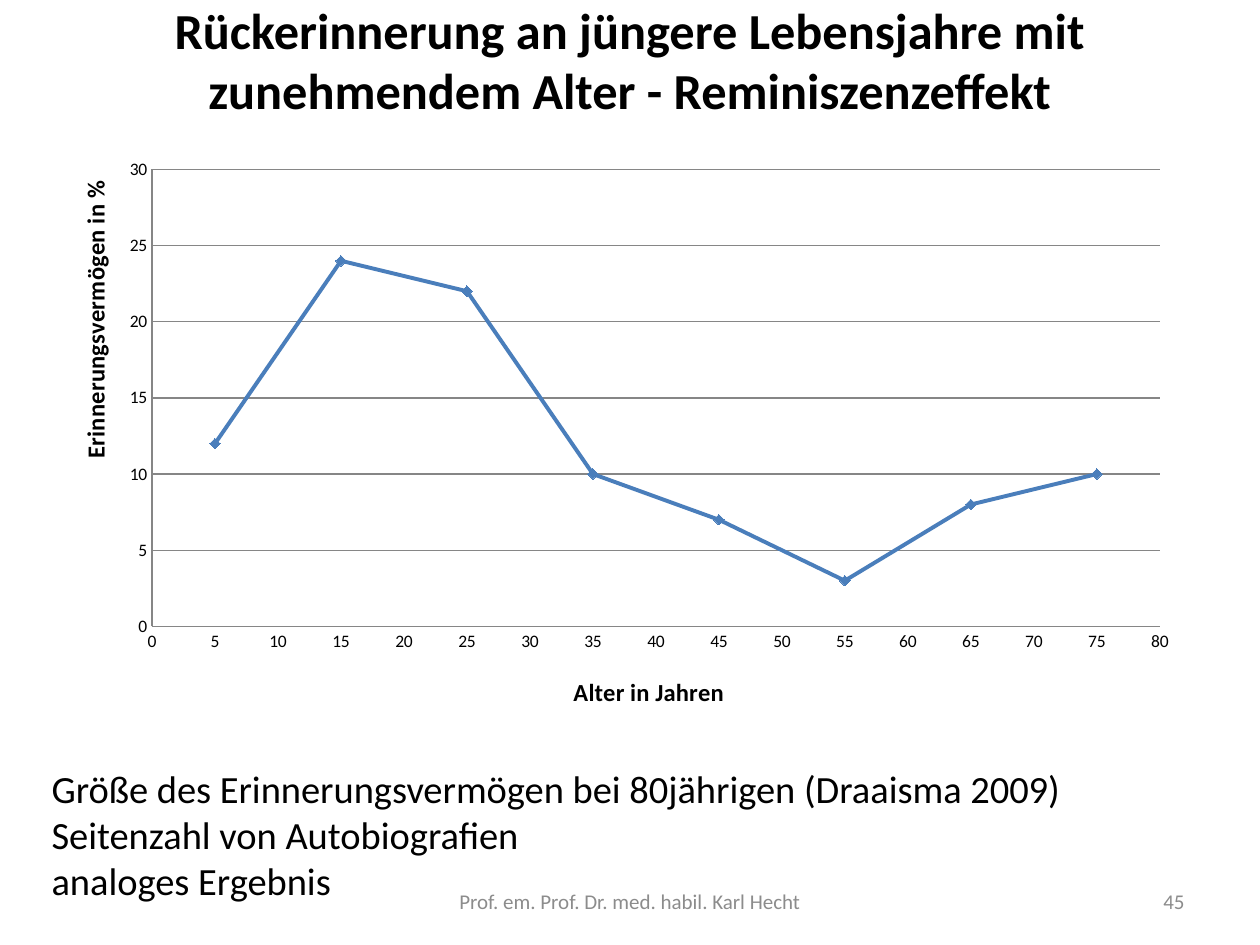
from lxml import etree
from pptx import Presentation
from pptx import util as u
from pptx.chart.data import XyChartData
from pptx.dml.color import RGBColor
from pptx.enum import chart as c
from pptx.enum import text as t
from pptx.oxml.ns import qn

BLACK = RGBColor(0x00, 0x00, 0x00)
GREY = RGBColor(0x8C, 0x8C, 0x8C)
AXIS_GREY = RGBColor(0x86, 0x86, 0x86)
BLUE = RGBColor(0x4F, 0x81, 0xBD)
CURVE_BLUE = RGBColor(0x4A, 0x7E, 0xBB)
FONT = "Calibri"

AGES = [5, 15, 25, 35, 45, 55, 65, 75]
RECALL = [12, 24, 22, 10, 7, 3, 8, 10]


def set_format(target, values):
    for name, value in values.items():
        setattr(target, name, value)


def set_font(font, size, color=BLACK, bold=False):
    set_format(font, {"name": FONT, "size": u.Pt(size), "bold": bold})
    font.color.rgb = color


def write_text(shape, lines, size, color=BLACK, bold=False,
               align=t.PP_ALIGN.LEFT, anchor=t.MSO_ANCHOR.TOP):
    frame = shape.text_frame
    set_format(frame, {"text": "\n".join(lines), "word_wrap": True,
                       "auto_size": t.MSO_AUTO_SIZE.NONE,
                       "vertical_anchor": anchor})
    for paragraph in frame.paragraphs:
        paragraph.alignment = align
        set_font(paragraph.font, size, color, bold)


def add_title(slide, title):
    shape = slide.shapes.title
    set_format(shape, {"left": u.Cm(0), "top": u.Cm(0),
                       "width": u.Cm(25.4), "height": u.Cm(2.39)})
    write_text(shape, [title], 28.8, bold=True, align=t.PP_ALIGN.CENTER,
               anchor=t.MSO_ANCHOR.MIDDLE)


def add_text(slide, box, lines, size, **style):
    shape = slide.shapes.add_textbox(*map(u.Cm, box))
    write_text(shape, lines, size, **style)


def set_layout(element, index, **fractions):
    """Place a chart part by fractions of the chart's width and height."""
    for old in element.findall(qn("c:layout")):
        element.remove(old)
    layout = etree.Element(qn("c:layout"))
    manual = etree.SubElement(layout, qn("c:manualLayout"))
    if "w" in fractions:
        etree.SubElement(manual, qn("c:layoutTarget"), val="inner")
    for name in ("xMode", "yMode"):
        etree.SubElement(manual, qn(f"c:{name}"), val="edge")
    for name, value in fractions.items():
        etree.SubElement(manual, qn(f"c:{name}"), val=str(value))
    element.insert(index, layout)


def format_axis(axis, title, maximum, rotation, x, y):
    set_format(axis, {"minimum_scale": 0, "maximum_scale": maximum,
                      "major_unit": 5,
                      "major_tick_mark": c.XL_TICK_MARK.NONE,
                      "minor_tick_mark": c.XL_TICK_MARK.NONE})
    set_font(axis.tick_labels.font, 10)
    axis.tick_labels.number_format = "General"
    axis.tick_labels.number_format_is_linked = False
    axis.format.line.color.rgb = AXIS_GREY
    axis.format.line.width = u.Pt(0.75)
    frame = axis.axis_title.text_frame
    frame.text = title
    set_font(frame.paragraphs[0].runs[0].font, 14, bold=True)
    element = axis.axis_title._element
    element.find(".//" + qn("a:bodyPr")).set("rot", str(rotation))
    set_layout(element, 1, x=x, y=y)


def format_series(series):
    series.smooth = True
    series.format.line.color.rgb = CURVE_BLUE
    series.format.line.width = u.Pt(2.25)
    marker = series.marker
    set_format(marker, {"style": c.XL_MARKER_STYLE.DIAMOND, "size": 6})
    marker.format.fill.solid()
    marker.format.fill.fore_color.rgb = BLUE
    marker.format.line.color.rgb = CURVE_BLUE


def add_recall_chart(slide):
    data = XyChartData()
    points = data.add_series("Series 1")
    for age, recall in zip(AGES, RECALL):
        points.add_data_point(age, recall)
    box = map(u.Cm, (0.79, 2.97, 23.22, 11.71))
    chart = slide.shapes.add_chart(
        c.XL_CHART_TYPE.XY_SCATTER_SMOOTH, *box, data).chart
    set_format(chart, {"has_title": False, "has_legend": False})
    set_font(chart.font, 10)
    chart.plots[0].vary_by_categories = False
    format_axis(chart.category_axis, "Alter in Jahren", 80, 0, 0.46, 0.9)
    format_axis(chart.value_axis, "Erinnerungsvermögen in %", 30, -5400000,
                0.03, 0.05)
    chart.category_axis.has_major_gridlines = False
    chart.value_axis.has_major_gridlines = True
    grid = chart.value_axis.major_gridlines.format.line
    grid.color.rgb = AXIS_GREY
    grid.width = u.Pt(0.75)
    format_series(chart.plots[0].series[0])
    plot_area = chart._chartSpace.find(".//" + qn("c:plotArea"))
    set_layout(plot_area, 0, x=0.098, y=0.038, w=0.875, h=0.787)


def main():
    presentation = Presentation()
    presentation.slide_width = u.Cm(25.4)
    presentation.slide_height = u.Cm(19.05)
    slide = presentation.slides.add_slide(presentation.slide_layouts[5])

    add_title(slide, "Rückerinnerung an jüngere Lebensjahre mit "
                     "zunehmendem Alter - Reminiszenzeffekt")
    add_text(slide, (0.79, 15.29, 23.22, 3.07),
             ["Größe des Erinnerungsvermögen bei 80jährigen (Draaisma 2009)",
              "Seitenzahl von Autobiografien",
              "analoges Ergebnis"], 22)
    add_recall_chart(slide)
    footer = {"color": GREY, "anchor": t.MSO_ANCHOR.MIDDLE}
    add_text(slide, (18.2, 17.66, 5.93, 1.01), ["45"], 12,
             align=t.PP_ALIGN.RIGHT, **footer)
    add_text(slide, (8.68, 17.66, 8.04, 1.01),
             ["Prof. em. Prof. Dr. med. habil. Karl Hecht"], 12,
             align=t.PP_ALIGN.CENTER, **footer)
    presentation.save("out.pptx")


if __name__ == "__main__":
    main()
